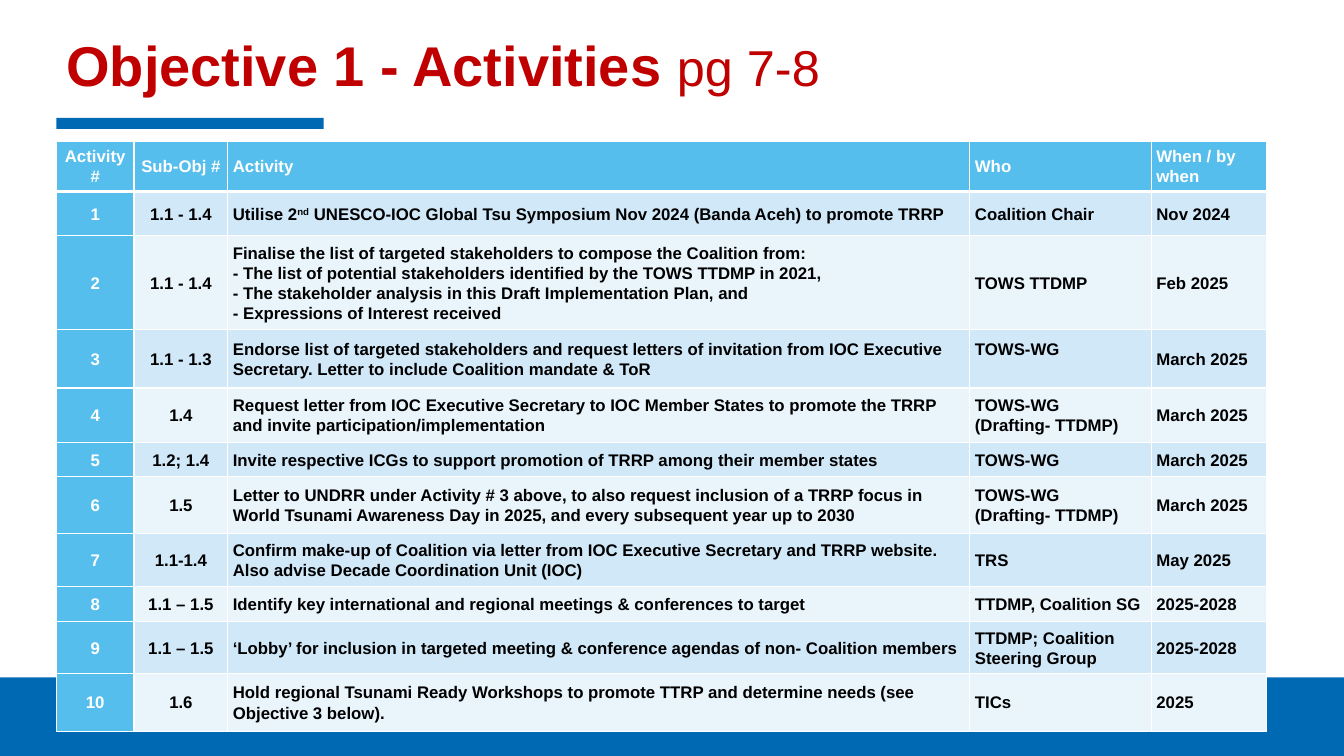
from lxml import etree
from pptx import Presentation
from pptx import util as u
from pptx.dml.color import RGBColor
from pptx.enum import shapes, text
from pptx.oxml.ns import qn

WIDE, HIGH = 13.33, 7.5
LEFT = 0.56
BLUE, SKY, RED, WHITE, BLACK = "0069B4", "56BEEC", "C00000", "FFFFFF", "000000"
BANDS = ["D1E8F8", "E9F4FB"]
COLS = [0.77, 0.93, 7.36, 1.8, 1.14]
ROWS = [0.5, 0.44, 0.93, 0.58, 0.54, 0.34, 0.56, 0.53, 0.35, 0.51, 0.58]
HEAD = ["Activity #", "Sub-Obj #", "Activity", "Who", "When / by when"]
# Sub-objective, activity, who, when; a line break starts a new paragraph
# and a list holds the runs of one paragraph.
PLAN = [
    ("1.1 - 1.4",
     [("Utilise 2", {}), ("nd", {"base": 30}),
      (" UNESCO-IOC Global Tsu Symposium Nov 2024 (Banda Aceh) to promote TRRP", {})],
     "Coalition Chair", "Nov 2024"),
    ("1.1 - 1.4",
     "Finalise the list of targeted stakeholders to compose the Coalition from:\n"
     "- The list of potential stakeholders identified by the TOWS TTDMP in 2021,\n"
     "- The stakeholder analysis in this Draft Implementation Plan, and\n"
     "- Expressions of Interest received",
     "TOWS TTDMP", "Feb 2025"),
    ("1.1 - 1.3",
     "Endorse list of targeted stakeholders and request letters of invitation from "
     "IOC Executive Secretary. Letter to include Coalition mandate & ToR",
     "TOWS-WG", "March 2025"),
    ("1.4",
     "Request letter from IOC Executive Secretary to IOC Member States to promote "
     "the TRRP and invite participation/implementation",
     "TOWS-WG\n(Drafting- TTDMP)", "March 2025"),
    ("1.2; 1.4",
     "Invite respective ICGs to support promotion of TRRP among their member states",
     "TOWS-WG", "March 2025"),
    ("1.5",
     "Letter to UNDRR under Activity # 3 above, to also request inclusion of a TRRP "
     "focus in World Tsunami Awareness Day in 2025, and every subsequent year up to 2030",
     "TOWS-WG\n(Drafting- TTDMP)", "March 2025"),
    ("1.1-1.4",
     "Confirm make-up of Coalition via letter from IOC Executive Secretary and TRRP "
     "website. Also advise Decade Coordination Unit (IOC)",
     "TRS", "May 2025"),
    ("1.1 – 1.5",
     "Identify key international and regional meetings & conferences to target",
     "TTDMP, Coalition SG", "2025-2028"),
    ("1.1 – 1.5",
     "‘Lobby’ for inclusion in targeted meeting & conference agendas of non- "
     "Coalition members",
     "TTDMP; Coalition Steering Group", "2025-2028"),
    ("1.6",
     "Hold regional Tsunami Ready Workshops to promote TTRP and determine needs "
     "(see Objective 3 below).",
     "TICs", "2025"),
]


def paint(fill, shade):
    fill.solid()
    fill.fore_color.rgb = RGBColor.from_string(shade)


def write(frame, words, size=12, color=BLACK, bold=True, align="LEFT", gap=1.07):
    """Fill a text frame from a string or a list of (text, format) runs."""
    lines = [[(line, {})] for line in words.split("\n")] if isinstance(words, str) else [words]
    for i, line in enumerate(lines):
        para = frame.add_paragraph() if i else frame.paragraphs[0]
        para.alignment = text.PP_ALIGN[align]
        para.line_spacing = gap
        for part, form in line:
            run = para.add_run()
            run.text = part
            font = run.font
            font.name = "Arial"
            font.size = u.Pt(form.get("size", size))
            font.bold = form.get("bold", bold)
            paint(font.fill, color)
            if "base" in form:
                run._r.get_or_add_rPr().set("baseline", str(form["base"] * 1000))


def bar(slide, box):
    shape = slide.shapes.add_shape(shapes.MSO_SHAPE.RECTANGLE, *map(u.Inches, box))
    shape.shadow.inherit = False
    paint(shape.fill, BLUE)
    shape.line.fill.background()


def title(slide, box):
    frame = slide.shapes.add_textbox(*map(u.Inches, box)).text_frame
    frame.word_wrap = True
    frame.vertical_anchor = text.MSO_ANCHOR.MIDDLE
    write(frame, [("Objective 1 - Activities ", {}), ("pg 7-8", {"size": 36, "bold": False})],
          size=40, color=RED, gap=0.9)


def edge(cell, low):
    """Rule a cell in white; low is the width of its bottom line."""
    props = cell._tc.get_or_add_tcPr()
    for i, (side, width) in enumerate(zip("LRTB", [1, 1, 1, low])):
        line = etree.Element(qn(f"a:ln{side}"), w=str(u.Pt(width)))
        solid = etree.SubElement(line, qn("a:solidFill"))
        etree.SubElement(solid, qn("a:srgbClr"), val=WHITE)
        props.insert(i, line)


def table(slide, box):
    grid = slide.shapes.add_table(len(ROWS), len(COLS), *map(u.Inches, box)).table
    for col, width in zip(grid.columns, COLS):
        col.width = u.Inches(width)
    for row, height in zip(grid.rows, ROWS):
        row.height = u.Inches(height)
    data = [HEAD] + [(str(n), *rest) for n, rest in enumerate(PLAN, 1)]
    for r, row in enumerate(data):
        for c, words in enumerate(row):
            cell = grid.cell(r, c)
            key = r == 0 or c == 0
            cell.margin_left = cell.margin_right = u.Inches(0.05)
            cell.margin_top = cell.margin_bottom = 0
            cell.vertical_anchor = text.MSO_ANCHOR.MIDDLE
            paint(cell.fill, SKY if key else BANDS[(r - 1) % 2])
            edge(cell, 1 if r else 3)
            write(cell.text_frame, words, color=WHITE if key else BLACK,
                  align="CENTER" if c < 2 else "LEFT")
    # The third activity's owner sits level with the first line beside it.
    grid.cell(3, 3).margin_bottom = u.Inches(0.2)


def main():
    deck = Presentation()
    deck.slide_width, deck.slide_height = u.Inches(WIDE), u.Inches(HIGH)
    slide = deck.slides.add_slide(deck.slide_layouts[6])
    bar(slide, (LEFT, 1.17, 2.65, 0.11))
    bar(slide, (0, HIGH - 0.78, WIDE, 0.78))
    title(slide, (LEFT, 0.13, 11.5, 1.1))
    table(slide, (LEFT, 1.4, sum(COLS), sum(ROWS)))
    deck.save("out.pptx")


if __name__ == "__main__":
    main()
